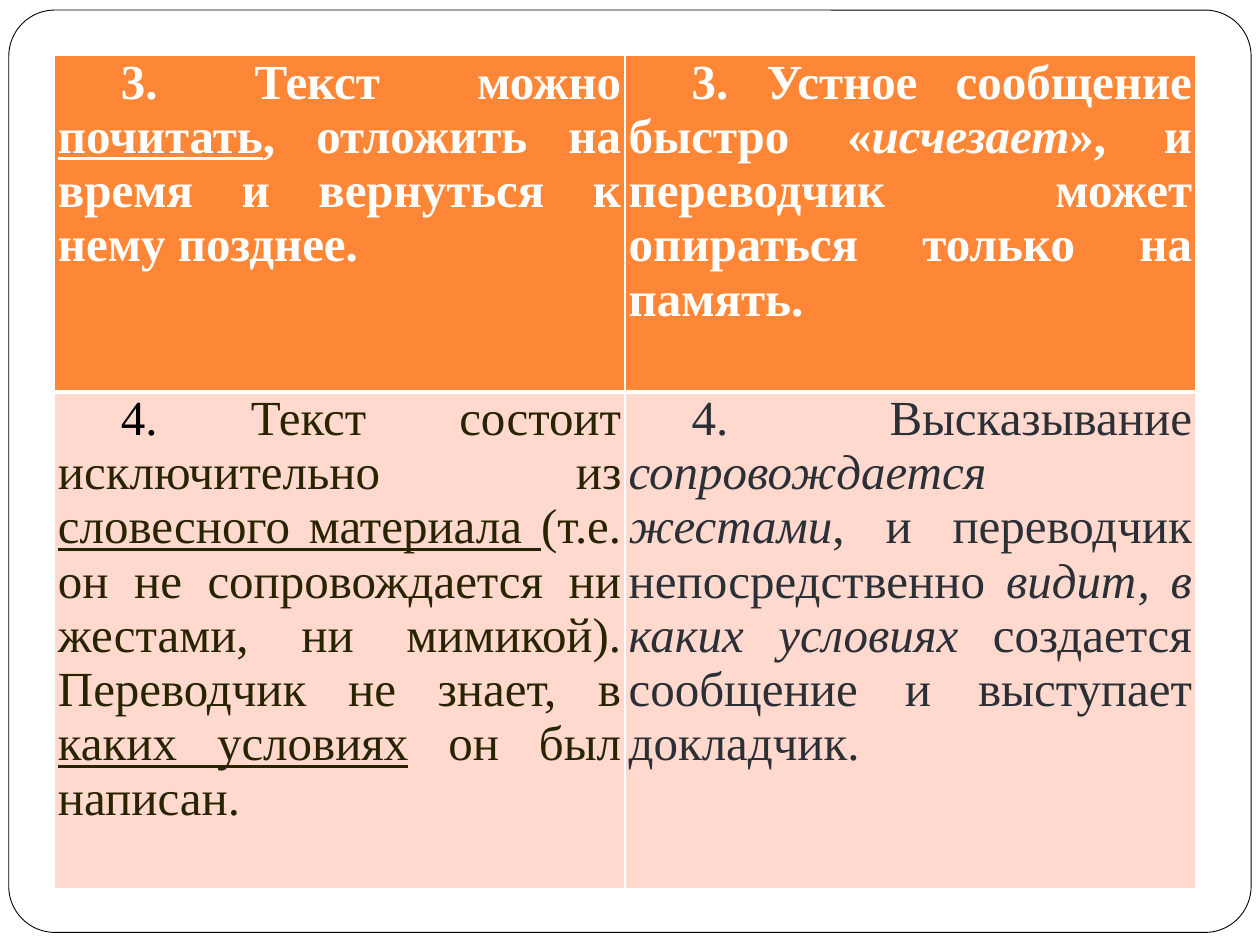
"""Build a slide with a table comparing written and oral translation."""
import dataclasses

import lxml.etree
import pptx
import pptx.dml.color
import pptx.enum.shapes
import pptx.enum.text
import pptx.oxml.ns
import pptx.util
from pptx.util import Inches


@dataclasses.dataclass(frozen=True)
class Theme:
    """Colours, font and sizes of the slide."""
    font: str = "Times New Roman"
    text_size: int = 28
    white: str = "FFFFFF"
    black: str = "000000"
    header: str = "FE8637"
    body: str = "FFD9CE"
    written: str = "292400"
    oral: str = "2B2F36"
    frame_line: float = 0.5
    thin_border: float = 1
    header_border: float = 3


THEME = Theme()

WRITTEN_HEADER = [
    ("3. Текст можно ", {}),
    ("почитать", {"underline": True}),
    (", отложить на время и вернуться к нему позднее. ", {}),
]
ORAL_HEADER = [
    ("3. Устное сообщение быстро «", {}),
    ("исчезает", {"italic": True}),
    ("», и переводчик может опираться только на память. ", {}),
]
WRITTEN_BODY = [
    ("4. ", {"color": THEME.black}),
    ("Текст состоит исключительно из ", {}),
    ("словесного материала ", {"underline": True}),
    ("(т.е. он не сопровождается ни жестами, ни мимикой). "
     "Переводчик не знает, в ", {}),
    ("каких условиях", {"underline": True}),
    (" он был написан. ", {}),
]
ORAL_BODY = [
    ("4. Высказывание ", {}),
    ("сопровождается жестами", {"italic": True}),
    (", переводчик непосредственно ".replace(", ", ", и ", 1), {}),
    ("видит, в каких условиях ", {"italic": True}),
    ("создается сообщение и выступает докладчик. ", {}),
]


def rgb(color):
    """Return a colour object for a hex string."""
    return pptx.dml.color.RGBColor.from_string(color)


def add_frame(page):
    """Add the rounded frame around the slide."""
    frame = page.shapes.add_shape(
        pptx.enum.shapes.MSO_SHAPE.ROUNDED_RECTANGLE,
        Inches(0.07), Inches(0.08), Inches(9.86), Inches(7.32))
    frame.adjustments[0] = 0.05
    frame.shadow.inherit = False
    frame.fill.solid()
    frame.fill.fore_color.rgb = rgb(THEME.white)
    frame.line.color.rgb = rgb(THEME.black)
    frame.line.width = pptx.util.Pt(THEME.frame_line)


def set_borders(cell, top, bottom):
    """Draw white borders around a cell, with widths in points."""
    properties = cell._tc.get_or_add_tcPr()
    widths = {"lnL": THEME.thin_border, "lnR": THEME.thin_border,
              "lnT": top, "lnB": bottom}
    for side, width in widths.items():
        line = lxml.etree.SubElement(
            properties, pptx.oxml.ns.qn(f"a:{side}"), w=str(pptx.util.Pt(width)))
        fill = lxml.etree.SubElement(line, pptx.oxml.ns.qn("a:solidFill"))
        lxml.etree.SubElement(fill, pptx.oxml.ns.qn("a:srgbClr"), val=THEME.white)


def add_spans(para, spans, color, bold):
    """Add the styled runs of a paragraph."""
    for text, style in spans:
        span = para.add_run()
        span.text = text
        span.font.name = THEME.font
        span.font.size = pptx.util.Pt(THEME.text_size)
        span.font.bold = bold
        span.font.italic = style.get("italic", False)
        span.font.underline = style.get("underline", False)
        span.font.color.rgb = rgb(style.get("color", color))


def fill_cell(cell, spans, color, is_header):
    """Style a cell and write its justified paragraph."""
    if is_header:
        set_borders(cell, THEME.thin_border, THEME.header_border)
    else:
        set_borders(cell, THEME.header_border, THEME.thin_border)
    cell.fill.solid()
    cell.fill.fore_color.rgb = rgb(THEME.header if is_header else THEME.body)
    cell.margin_left = cell.margin_right = Inches(0.03)
    cell.margin_top = cell.margin_bottom = 0
    para = cell.text_frame.paragraphs[0]
    para.alignment = pptx.enum.text.PP_ALIGN.JUSTIFY
    properties = para._p.get_or_add_pPr()
    properties.set("marL", "0")
    properties.set("indent", str(Inches(0.5)))
    add_spans(para, spans, color, is_header)


def add_comparison(page):
    """Add the table of written text against oral message."""
    table = page.shapes.add_table(
        2, 2, Inches(0.43), Inches(0.44), Inches(9.06), Inches(6.61)).table
    for row, height in zip(table.rows, (2.67, 3.94)):
        row.height = Inches(height)
    rows = [
        [(WRITTEN_HEADER, THEME.white), (ORAL_HEADER, THEME.white)],
        [(WRITTEN_BODY, THEME.written), (ORAL_BODY, THEME.oral)],
    ]
    for row_index, row in enumerate(rows):
        for column_index, (spans, color) in enumerate(row):
            fill_cell(table.cell(row_index, column_index), spans, color, row_index == 0)


def main():
    """Build and save the deck."""
    deck = pptx.Presentation()
    deck.slide_width, deck.slide_height = Inches(10), Inches(7.5)
    page = deck.slides.add_slide(deck.slide_layouts[6])
    add_frame(page)
    add_comparison(page)
    deck.save("out.pptx")


if __name__ == "__main__":
    main()
